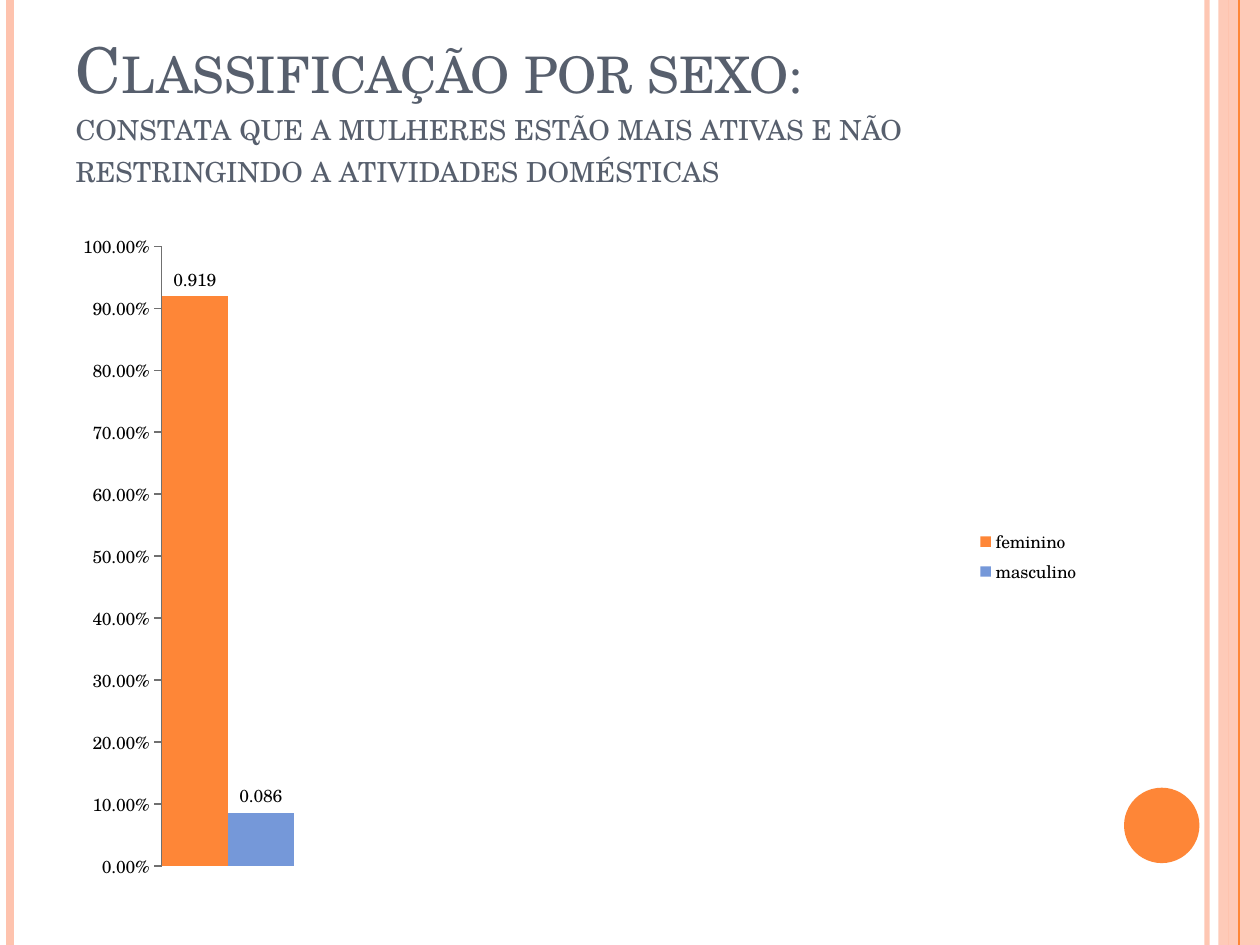
import pptx
import pptx.chart.data
import pptx.dml.color
import pptx.enum.chart
import pptx.enum.shapes
import pptx.enum.text
import pptx.oxml
import pptx.oxml.ns
import pptx.util
from lxml import etree

Cm = pptx.util.Cm
Pt = pptx.util.Pt
qn = pptx.oxml.ns.qn
kinds = pptx.enum.shapes
charts = pptx.enum.chart
hues = {"peach": "FEC3AE", "orange": "FE8637", "blue": "7598D9",
        "red": "B32C16", "slate": "575F6D", "black": "000000", "grey": "707070"}
face = "TeX Gyre Schola"


def paint(fill, hue, alpha=100):
    fill.solid()
    fill.fore_color.rgb = pptx.dml.color.RGBColor.from_string(hues[hue])
    if alpha < 100:
        tint = fill._xPr.find(qn("a:solidFill"))[0]
        etree.SubElement(tint, qn("a:alpha"), val=str(alpha * 1000))


deck = pptx.Presentation()
deck.slide_width, deck.slide_height = Cm(25.4), Cm(19.05)
slide = deck.slides.add_slide(deck.slide_layouts[5])
shapes = slide.shapes

band = shapes.add_shape(kinds.MSO_SHAPE.RECTANGLE, Cm(24.56), 0, Cm(0.84), Cm(19.05))
disc = shapes.add_shape(kinds.MSO_SHAPE.OVAL, Cm(22.66), Cm(15.88), Cm(1.52), Cm(1.52))
for shape, hue, alpha in [(band, "peach", 87), (disc, "orange", 100)]:
    shape.shadow.inherit = False
    shape.line.fill.background()
    paint(shape.fill, hue, alpha)

for left, hue, width, alpha in [(24.33, "peach", 3, 93), (0.21, "peach", 4.5, 100),
                                (24.76, "orange", 0.75, 100), (24.98, "peach", 1.5, 100)]:
    if left > 24.5:
        hue = "orange" if left > 24.9 else "peach"
    stripe = shapes.add_connector(kinds.MSO_CONNECTOR.STRAIGHT,
                                  Cm(left), 0, Cm(left), Cm(19.05))
    stripe.line.width = Pt(width)
    paint(stripe.line.fill, hue, alpha)
    etree.SubElement(stripe._element.spPr, qn("a:effectLst"))

title = shapes.title
title.left, title.top, title.width, title.height = Cm(1.27), Cm(0.76), Cm(20.75), Cm(3.18)
frame = title.text_frame
frame.word_wrap = True
frame.auto_size = pptx.enum.text.MSO_AUTO_SIZE.NONE
frame.vertical_anchor = pptx.enum.text.MSO_ANCHOR.BOTTOM
para = frame.paragraphs[0]
para.alignment = pptx.enum.text.PP_ALIGN.LEFT
lines = [("Classificação por sexo:", 36),
         ("constata que a mulheres estão mais ativas e não "
          "restringindo a atividades domésticas", 19.8)]
for place, (words, size) in enumerate(lines):
    if place:
        para.add_line_break()
    run = para.add_run()
    run.text = words
    run.font.name = face
    run.font.size = Pt(size)
    paint(run.font.fill, "slate")
    run.font._element.set("cap", "small")

data = pptx.chart.data.CategoryChartData()
data.categories = ["1", "", "", ""]
sexes = [("feminino", 0.919, "orange"), ("masculino", 0.086, "blue"),
         ("Series 3", None, "red")]
for name, value, hue in sexes:
    data.add_series(name, [value, None, None, None])
chart = shapes.add_chart(charts.XL_CHART_TYPE.COLUMN_CLUSTERED, Cm(1.27), Cm(4.45),
                         Cm(20.75), Cm(13.54), data).chart
chart.has_title = False
chart.font.name = face
chart.font.size = Pt(10)
paint(chart.font.fill, "black")

plot = chart.plots[0]
plot.gap_width = 0
plot.overlap = 0
plot.vary_by_categories = False
for series, (name, value, hue) in zip(plot.series, sexes):
    paint(series.format.fill, hue)
    if value is not None:
        labels = series.data_labels
        labels.show_value = True
        labels.number_format = "General"
        labels.number_format_is_linked = False
        labels.position = charts.XL_LABEL_POSITION.OUTSIDE_END

chart.category_axis.visible = False
axis = chart.value_axis
axis.minimum_scale, axis.maximum_scale, axis.major_unit = 0, 1, 0.1
axis.has_major_gridlines = False
axis.major_tick_mark = charts.XL_TICK_MARK.OUTSIDE
axis.tick_labels.number_format = "0.00%"
axis.tick_labels.number_format_is_linked = False
paint(axis.format.line.fill, "grey")

chart.has_legend = True
legend = chart.legend
legend.position = charts.XL_LEGEND_POSITION.RIGHT
legend.include_in_layout = False
entry = etree.Element(qn("c:legendEntry"))
etree.SubElement(entry, qn("c:idx"), val="2")
etree.SubElement(entry, qn("c:delete"), val="1")
legend._element.find(qn("c:legendPos")).addnext(entry)

area = chart._chartSpace.chart.plotArea
for old in area.findall(qn("c:layout")):
    area.remove(old)
layout = etree.Element(qn("c:layout"))
area.insert(0, layout)
manual = etree.SubElement(layout, qn("c:manualLayout"))
for tag, value in [("layoutTarget", "inner"), ("xMode", "edge"), ("yMode", "edge"),
                   ("x", "0.096"), ("y", "0.038"), ("w", "0.77"), ("h", "0.923")]:
    etree.SubElement(manual, qn("c:" + tag), val=value)

deck.save("out.pptx")
